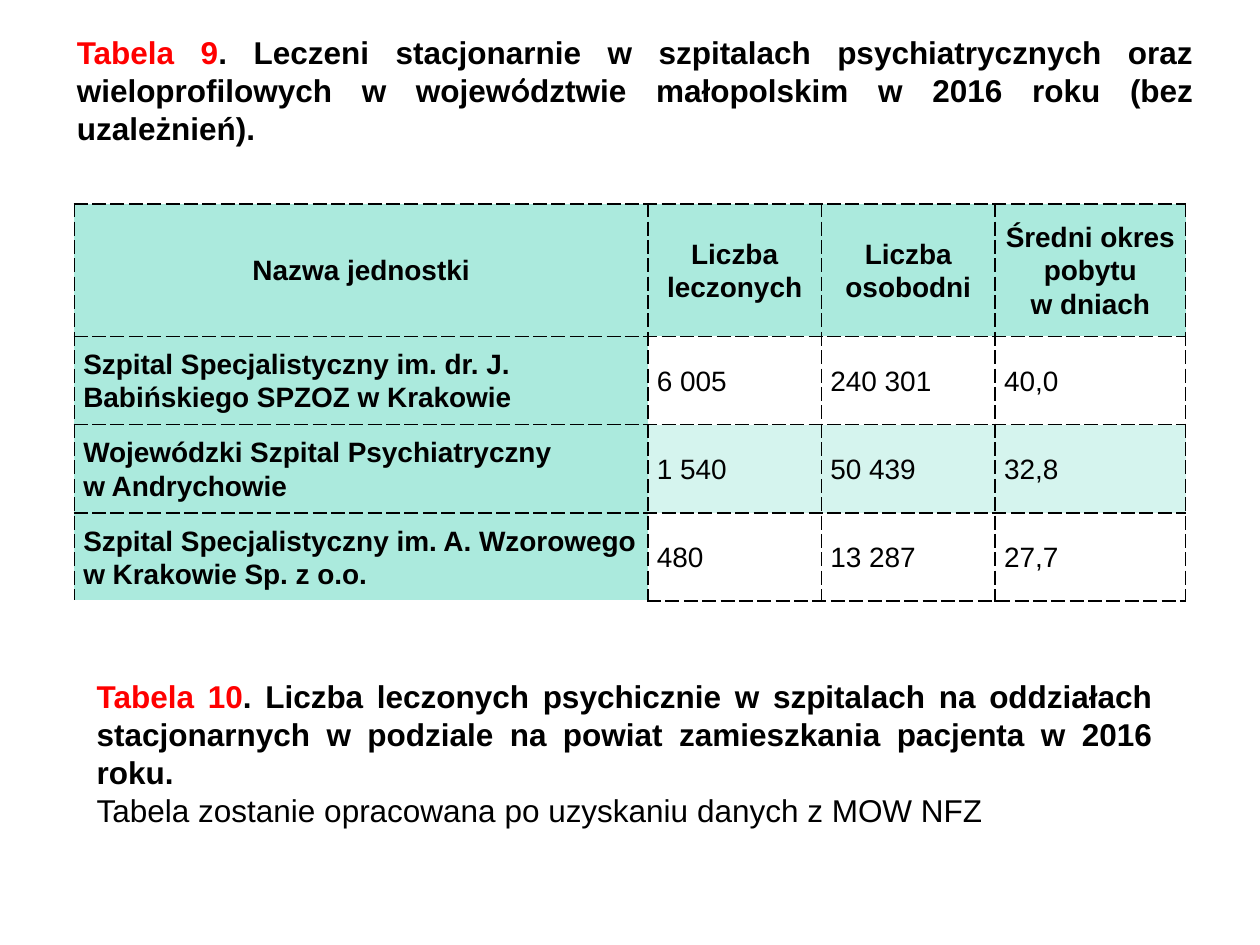
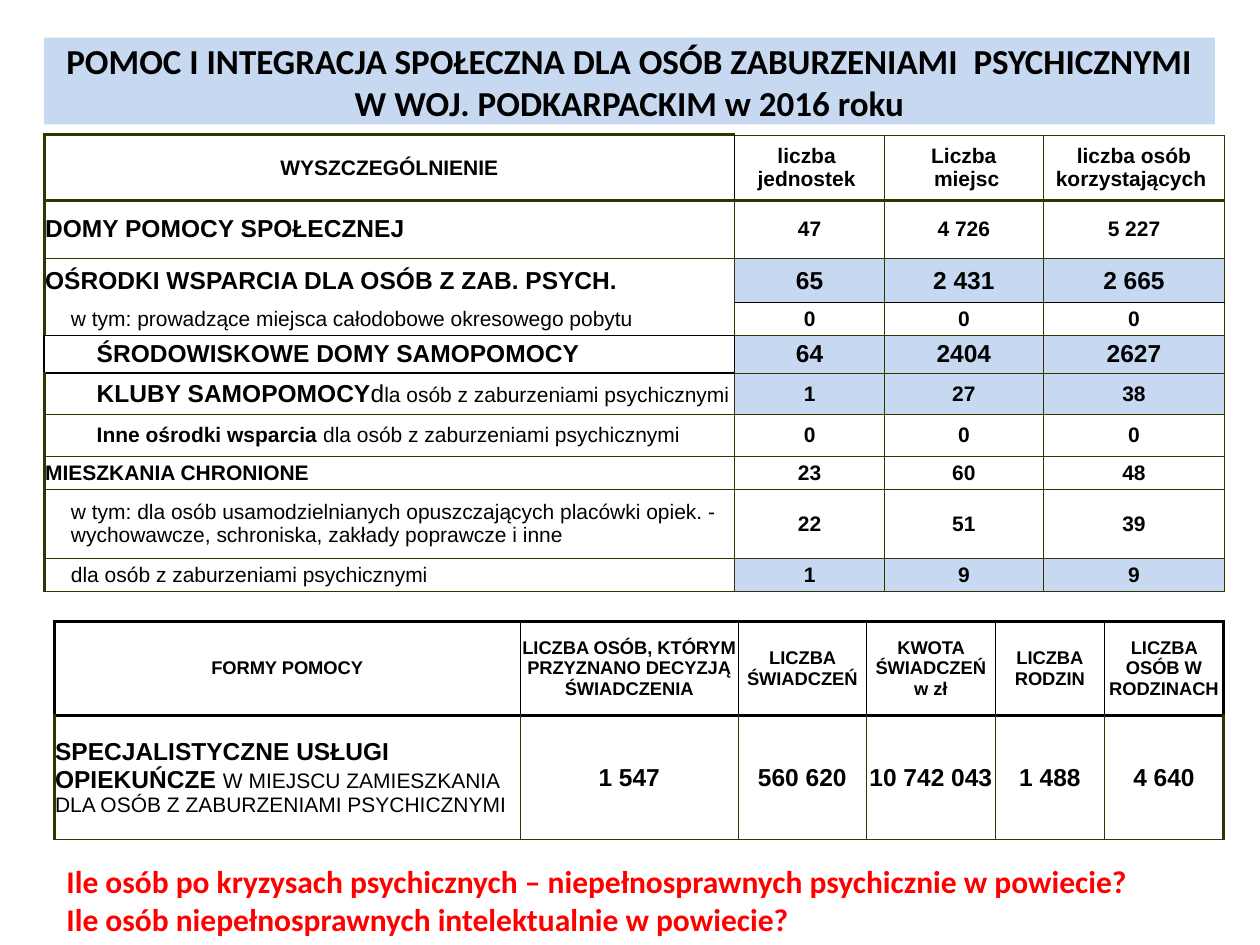
from pptx import Presentation
from pptx.dml.color import RGBColor
from pptx.enum.text import MSO_ANCHOR, MSO_AUTO_SIZE, PP_ALIGN
from pptx.oxml import parse_xml
from pptx.oxml.ns import nsdecls
from pptx.util import Cm, Pt

HUES = {"black": "000000", "red": "FF0000", "white": "FFFFFF", "olive": "333300",
        "mint": "ABEADD", "pale": "D5F4EE", "blue": "C6D9F1"}
LEFT, MID, FULL = PP_ALIGN.LEFT, PP_ALIGN.CENTER, PP_ALIGN.JUSTIFY


def write(frame, paras, size, bold=True, hue="black", face="Arial", side=LEFT, lead=None):
    frame.word_wrap = True
    for i, para in enumerate(paras):
        line = frame.add_paragraph() if i else frame.paragraphs[0]
        line.alignment = side
        line.line_spacing = lead
        if isinstance(para, str):
            line.text = para
            marks = [{} for run in line.runs]
        else:
            marks = [mark for text, mark in para]
            for text, mark in para:
                line.add_run().text = text
        for run, mark in zip(line.runs, marks):
            run.font.size = Pt(mark.get("size", size))
            run.font.bold = mark.get("bold", bold)
            run.font.name = mark.get("face", face)
            run.font.color.rgb = RGBColor.from_string(HUES[mark.get("hue", hue)])


def grid(slide, at, cols, rows, base, odd, fills, pad):
    frame = slide.shapes.add_table(len(rows), len(cols), Cm(at[0]), Cm(at[1]),
                                   Cm(sum(cols)), Cm(sum(rows)))
    table = frame.table
    table.first_row = table.horz_banding = False
    for col, wide in zip(table.columns, cols):
        col.width = Cm(wide)
    for r, high in enumerate(rows):
        table.rows[r].height = Cm(high)
        for c in range(len(cols)):
            cell = table.cell(r, c)
            cell.vertical_anchor = MSO_ANCHOR.MIDDLE
            cell.margin_left = cell.margin_right = Cm(pad)
            cell.margin_top = cell.margin_bottom = 0
            if (r, c) in fills:
                cell.fill.solid()
                cell.fill.fore_color.rgb = RGBColor.from_string(HUES[fills[r, c]])
            else:
                cell.fill.background()
            for i, side in enumerate("LRTB"):
                edge = odd.get((r, c, side), base)
                if edge:
                    hue, wide, dash = edge
                    body = (f'<a:solidFill><a:srgbClr val="{HUES[hue]}"/></a:solidFill>'
                            f'<a:prstDash val="{dash}"/>')
                else:
                    wide, body = 0, "<a:noFill/>"
                cell._tc.get_or_add_tcPr().insert(i, parse_xml(
                    f'<a:ln{side} {nsdecls("a")} w="{Pt(wide)}">{body}</a:ln{side}>'))
    return table


deck = Presentation()
deck.slide_width, deck.slide_height = Cm(25.4), Cm(19.05)

page = deck.slides.add_slide(deck.slide_layouts[6])
units = [
    [["Nazwa jednostki"], ["Liczba leczonych"], ["Liczba osobodni"],
     ["Średni okres pobytu", "w dniach"]],
    [["Szpital Specjalistyczny im. dr. J. Babińskiego SPZOZ w Krakowie"],
     ["6 005"], ["240 301"], ["40,0"]],
    [["Wojewódzki Szpital Psychiatryczny", "w Andrychowie"],
     ["1 540"], ["50 439"], ["32,8"]],
    [["Szpital Specjalistyczny im. A. Wzorowego", "w Krakowie Sp. z o.o."],
     ["480"], ["13 287"], ["27,7"]],
]
fills = {(r, c): "mint" if r == 0 or c == 0 else "pale"
         for r in range(4) for c in range(4) if r in (0, 2) or c == 0}
table = grid(page, (1.5, 4.11), [11.56, 3.5, 3.5, 3.84], [2.67] + [1.78] * 3,
             ("black", 1, "dash"), {(3, 0, "B"): ("white", 1, "solid")}, fills, 0.18)
for r, row in enumerate(units):
    for c, paras in enumerate(row):
        write(table.cell(r, c).text_frame, paras, 16, r == 0 or c == 0,
              side=LEFT if r else MID, lead=1.07)

red, plain = {"hue": "red"}, {}
notes = [
    ((1.3, 0.53, 23.01, 2.57),
     [[("Tabela 9", red),
       (". Leczeni stacjonarnie w szpitalach psychiatrycznych oraz wieloprofilowych w wojew", plain),
       ("ó", {"face": "Quicksand"}),
       ("dztwie małopolskim w 2016 roku (bez uzależnień).", plain)]]),
    ((1.7, 13.51, 21.79, 3.33),
     [[("Tabela 10", red),
       (". Liczba leczonych psychicznie w szpitalach na oddziałach stacjonarnych "
        "w podziale na powiat zamieszkania pacjenta w 2016 roku.", plain)],
      [("Tabela zostanie opracowana po uzyskaniu danych z MOW NFZ", {"bold": False})]]),
]
for at, paras in notes:
    frame = page.shapes.add_textbox(*map(Cm, at)).text_frame
    frame.vertical_anchor = MSO_ANCHOR.MIDDLE
    write(frame, paras, 18, side=FULL)

page = deck.slides.add_slide(deck.slide_layouts[5])
title = page.shapes.title
title.left, title.top, title.width, title.height = map(Cm, (0.89, 0.76, 23.6, 1.75))
title.fill.solid()
title.fill.fore_color.rgb = RGBColor.from_string(HUES["blue"])
title.text_frame.auto_size = MSO_AUTO_SIZE.NONE
title.text_frame.vertical_anchor = MSO_ANCHOR.MIDDLE
write(title.text_frame,
      ["POMOC I INTEGRACJA SPOŁECZNA DLA OSÓB ZABURZENIAMI  PSYCHICZNYMI "
       "W WOJ. PODKARPACKIM w 2016 roku"], 20, face="Calibri", side=MID)

big, light = {"size": 14}, {"bold": False}
care = [
    (0, 12, [("DOMY POMOCY SPOŁECZNEJ", big)], "47", "4 726", "5 227"),
    (0, 14, [("OŚRODKI WSPARCIA DLA OSÓB Z ZAB. PSYCH.", big)], "65", "2 431", "2 665"),
    (1, 12, [("w tym: prowadzące miejsca całodobowe okresowego pobytu", light)], "0", "0", "0"),
    (2, 14, [("ŚRODOWISKOWE DOMY SAMOPOMOCY", big)], "64", "2404", "2627"),
    (2, 12, [("KLUBY SAMOPOMOCY", big), ("d", {"size": 14, "bold": False}),
             ("la osób z zaburzeniami psychicznymi", light)], "1", "27", "38"),
    (2, 12, [("Inne ośrodki wsparcia ", plain),
             ("dla osób z zaburzeniami psychicznymi", light)], "0", "0", "0"),
    (0, 12, [("MIESZKANIA CHRONIONE", plain)], "23", "60", "48"),
    (1, 12, [("w tym: dla osób usamodzielnianych opuszczających placówki opiek. - "
              "wychowawcze, schroniska, zakłady poprawcze i inne", light)], "22", "51", "39"),
    (1, 12, [("dla osób z zaburzeniami psychicznymi", light)], "1", "9", "9"),
]
thin, thick = ("olive", 0.5, "solid"), ("olive", 2, "solid")
fine, dark, bold = [("black", wide, "solid") for wide in (0.5, 1, 2)]
odd = {(r, 0, "L"): thick for r in range(10)}
for c in range(4):
    odd[0, c, "B"] = odd[1, c, "T"] = thick
    odd[2, c, "B"] = odd[3, c, "T"] = fine if c else None
odd[0, 0, "T"] = thick
odd[0, 0, "R"] = odd[0, 1, "L"] = fine
for side in "LRTB":
    odd[4, 0, side] = dark
odd[3, 0, "B"] = odd[5, 0, "T"] = odd[4, 1, "L"] = dark
fills = {(r, c): "blue" for r in (2, 4, 5, 9) for c in (1, 2, 3)}
table = grid(page, (0.89, 2.72), [13.92, 3.02, 3.2, 3.66],
             [1.32, 1.17, 0.89, 0.66, 0.76, 0.84, 0.84, 0.66, 1.4, 0.66],
             thin, odd, fills, 0.02)
heads = [["WYSZCZEGÓLNIENIE"], ["liczba ", "jednostek "], ["Liczba", " miejsc"],
         ["liczba osób korzystających "]]
for c, paras in enumerate(heads):
    write(table.cell(0, c).text_frame, paras, 12, side=MID)
for r, (step, size, label, *counts) in enumerate(care, 1):
    cell = table.cell(r, 0)
    cell.margin_left = Cm(0.02 + 0.52 * step)
    write(cell.text_frame, [label], 12)
    for c, count in enumerate(counts, 1):
        write(table.cell(r, c).text_frame, [count], size, side=MID)

forms = [
    ["FORMY POMOCY", "LICZBA OSÓB, KTÓRYM PRZYZNANO DECYZJĄ ŚWIADCZENIA",
     "LICZBA ŚWIADCZEŃ", "KWOTA ŚWIADCZEŃ w zł", "LICZBA\nRODZIN",
     "LICZBA OSÓB W RODZINACH"],
    [[("SPECJALISTYCZNE USŁUGI OPIEKUŃCZE ", plain),
      ("W MIEJSCU ZAMIESZKANIA DLA OSÓB Z ZABURZENIAMI PSYCHICZNYMI",
       {"size": 12, "bold": False})],
     "1 547", "560 620", "10 742 043", "1 488", "4 640"],
]
odd = {}
for c in range(6):
    odd[0, c, "T"] = odd[0, c, "B"] = odd[1, c, "T"] = bold
    odd[0, c, "L"] = odd[0, c, "R"] = fine
for r, edge in enumerate((bold, thick)):
    odd[r, 0, "L"] = odd[r, 5, "R"] = edge
table = grid(page, (1.09, 12.52), [9.4, 4.39, 2.59, 2.59, 2.21, 2.39], [1.91, 2.49],
             thin, odd, {}, 0.02)
for r, row in enumerate(forms):
    for c, para in enumerate(row):
        write(table.cell(r, c).text_frame, [para], 14 if r else 10.5,
              side=LEFT if r and c == 0 else MID)

box = page.shapes.add_textbox(Cm(1.09), Cm(17.25), Cm(23.39), Cm(1.8))
write(box.text_frame,
      ["Ile osób po kryzysach psychicznych – niepełnosprawnych psychicznie w powiecie?",
       "Ile osób niepełnosprawnych intelektualnie w powiecie?"],
      18, hue="red", face="Calibri")

deck.save("out.pptx")
